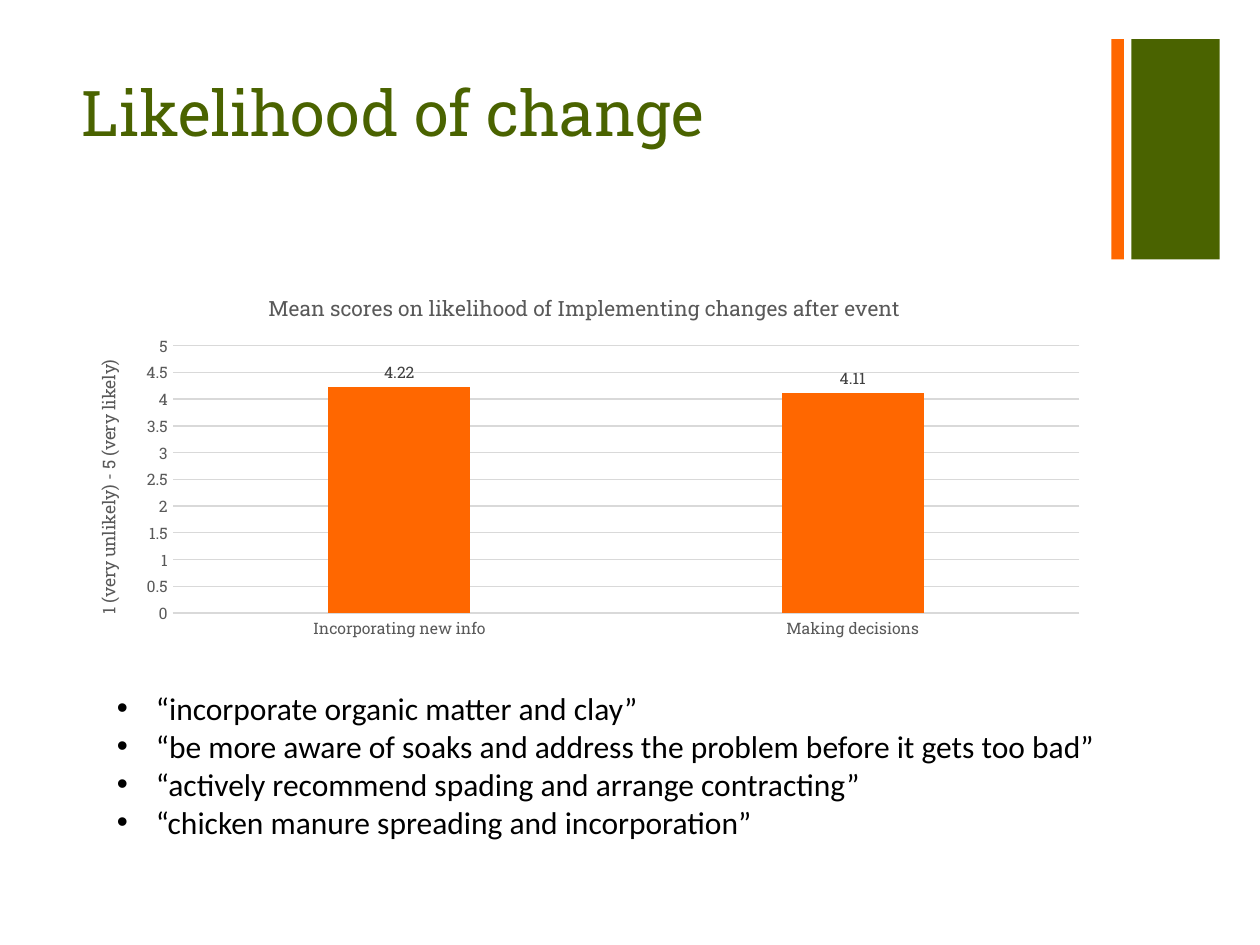
from lxml import etree
from pptx import Presentation
from pptx import util as u
from pptx.chart.data import CategoryChartData
from pptx.dml.color import RGBColor
from pptx.enum import chart as charts, shapes, text
from pptx.oxml.ns import qn

GREEN = RGBColor(0x4A, 0x63, 0x00)
ORANGE = RGBColor(0xFF, 0x67, 0x00)
BLACK = RGBColor(0x00, 0x00, 0x00)
DARK_GREY = RGBColor(0x40, 0x40, 0x40)
GREY = RGBColor(0x59, 0x59, 0x59)
LIGHT_GREY = RGBColor(0xD9, 0xD9, 0xD9)

SCORES = {"Incorporating new info": 4.22, "Making decisions": 4.11}
QUOTES = [
    "“incorporate organic matter and clay”",
    "“be more aware of soaks and address the problem before it gets too bad”",
    "“actively recommend spading and arrange contracting”",
    "“chicken manure spreading and incorporation”",
]


class SlideBuilder:
    heading_font = "Roboto Slab"
    body_font = "Calibri"

    def __init__(self, page):
        self.page = page

    def style(self, font, size, color, name=heading_font):
        font.name = name
        font.size = u.Pt(size)
        font.bold = False
        font.color.rgb = color

    def bar(self, left, top, width, height, color):
        bar = self.page.shapes.add_shape(
            shapes.MSO_SHAPE.RECTANGLE, *map(u.Inches, (left, top, width, height)))
        bar.shadow.inherit = False
        bar.fill.solid()
        bar.fill.fore_color.rgb = color
        bar.line.fill.background()

    def title(self, left, top, width, height, words):
        box = self.page.shapes.title
        box.left, box.top, box.width, box.height = map(
            u.Inches, (left, top, width, height))
        frame = box.text_frame
        frame.text = words
        frame.vertical_anchor = text.MSO_ANCHOR.TOP
        para = frame.paragraphs[0]
        para.alignment = text.PP_ALIGN.LEFT
        self.style(para.font, 36, GREEN)

    def caption(self, owner, words, size):
        frame = owner.text_frame
        frame.text = words
        self.style(frame.paragraphs[0].font, size, GREY)

    def column_chart(self, left, top, width, height, heading, scale, scores):
        data = CategoryChartData()
        data.categories = list(scores)
        data.add_series("Series 1", list(scores.values()))
        chart = self.page.shapes.add_chart(
            charts.XL_CHART_TYPE.COLUMN_CLUSTERED,
            *map(u.Inches, (left, top, width, height)), data).chart
        self.style(chart.font, 10, BLACK)
        chart.has_legend = False
        self.caption(chart.chart_title, heading, 12)
        chart.chart_title.include_in_layout = False

        for axis in (chart.category_axis, chart.value_axis):
            axis.major_tick_mark = axis.minor_tick_mark = charts.XL_TICK_MARK.NONE
            self.style(axis.tick_labels.font, 9, GREY)
        values = chart.value_axis
        values.minimum_scale, values.maximum_scale = 0, 5
        values.major_unit = 0.5
        values.format.line.fill.background()
        self.caption(values.axis_title, scale, 10)
        for line in (chart.category_axis.format.line,
                     values.major_gridlines.format.line):
            line.color.rgb = LIGHT_GREY
            line.width = u.Pt(0.75)

        plot = chart.plots[0]
        plot.gap_width, plot.overlap = 219, -27
        plot.vary_by_categories = False
        series = plot.series[0]
        series.format.fill.solid()
        series.format.fill.fore_color.rgb = ORANGE
        labels = series.data_labels
        labels.show_value = True
        labels.position = charts.XL_LABEL_POSITION.OUTSIDE_END
        labels.number_format = "0.00"
        labels.number_format_is_linked = False
        self.style(labels.font, 9, DARK_GREY)

    def bullets(self, left, top, width, height, lines):
        box = self.page.shapes.add_textbox(
            *map(u.Inches, (left, top, width, height)))
        frame = box.text_frame
        frame.word_wrap = True
        frame.auto_size = text.MSO_AUTO_SIZE.SHAPE_TO_FIT_TEXT
        frame.text = "\n".join(lines)
        indent = u.Inches(0.31)
        for para in frame.paragraphs:
            self.style(para.font, 18, BLACK, self.body_font)
            props = para._p.get_or_add_pPr()
            props.set("marL", str(indent))
            props.set("indent", str(-indent))
            bullet_font = etree.Element(qn("a:buFont"), typeface="Arial")
            bullet = etree.Element(qn("a:buChar"), char="•")
            props.insert(0, bullet_font)
            props.insert(1, bullet)


def main():
    deck = Presentation()
    deck.slide_width, deck.slide_height = u.Inches(10), u.Inches(7.5)
    builder = SlideBuilder(deck.slides.add_slide(deck.slide_layouts[5]))
    builder.bar(8.98, 0.31, 0.7, 1.75, GREEN)
    builder.bar(8.82, 0.31, 0.1, 1.75, ORANGE)
    builder.title(0.55, 0.53, 8.26, 1.22, "Likelihood of change")
    builder.column_chart(
        0.55, 2.17, 8.18, 2.96,
        "Mean scores on likelihood of Implementing changes after event",
        "1 (very unlikely) - 5 (very likely)", SCORES)
    builder.bullets(0.83, 5.42, 8.37, 1.31, QUOTES)
    deck.save("out.pptx")


if __name__ == "__main__":
    main()
